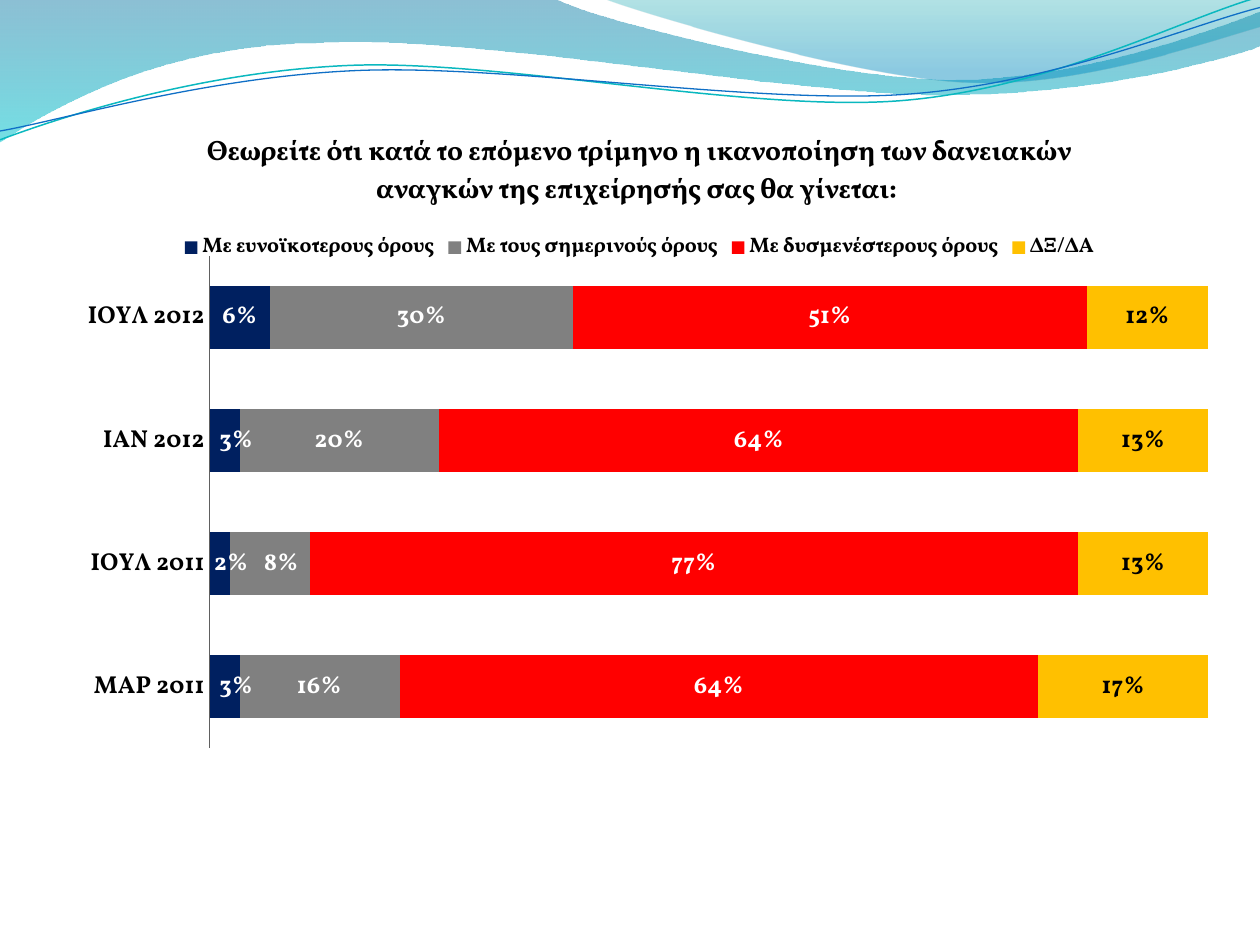
import math

import pptx
import pptx.chart.data
import pptx.dml.color
import pptx.enum.chart
import pptx.oxml.ns
import pptx.util
from lxml import etree

Cm, Pt = pptx.util.Cm, pptx.util.Pt
qn = pptx.oxml.ns.qn
enum = pptx.enum.chart
FACE = "Vollkorn"
INCH = 2.54


def hue(code):
    return pptx.dml.color.RGBColor.from_string(code)


def place(node, index, **parts):
    """Give a chart node a manual layout as its child at the given index."""
    for old in node.findall(qn("c:layout")):
        node.remove(old)
    layout = etree.Element(qn("c:layout"))
    manual = etree.SubElement(layout, qn("c:manualLayout"))
    for name, value in parts.items():
        etree.SubElement(manual, qn("c:" + name)).set("val", str(value))
    node.insert(index, layout)


deck = pptx.Presentation()
deck.slide_width, deck.slide_height = Cm(10 * INCH), Cm(7.5 * INCH)
slide = deck.slides.add_slide(deck.slide_layouts[6])

# Waves in inches: two numbers end a straight line, six a Bezier curve.
# A filled wave lists (position, colour, opacity); a thin one has
# (colour, width) and the centre it is tilted about.
waves = [
    ([(0, -0.01), (4.4, -0.01), (4.76, 0.17, 6.64, 0.63, 7.58, 0.63),
      (8.53, 0.63, 9.58, 0.26, 10, 0.09), (10.01, 0.36),
      (9.83, 0.44, 8.7, 0.76, 7.46, 0.75), (6.22, 0.75, 3.82, 0.28, 2.57, 0.34),
      (1.29, 0.35, 0.46, 0.83, -0.01, 1.13), (0, -0.01)],
     [(0, "0074A1", 45), (1, "00C6CF", 55)], None, None),
    ([(4.79, -0.01), (5.09, 0.11, 6.82, 0.62, 7.69, 0.65),
      (8.56, 0.69, 9.61, 0.32, 10, 0.21), (10, 0), (4.79, -0.01)],
     [(0, "00A1A9", 30), (0.8, "008BBF", 45)], None, None),
    ([(0, 1.11), (0.48, 0.93, 1.58, 0.57, 2.77, 0.52),
      (3.95, 0.47, 5.93, 0.89, 7.13, 0.8), (8.33, 0.71, 9.38, 0.15, 9.98, -0.02)],
     None, ("0AB8BF", 0.85), (4.99, 0.58)),
    ([(0, 1.04), (0.47, 0.96, 1.64, 0.61, 2.83, 0.56),
      (4.03, 0.51, 5.97, 0.83, 7.17, 0.75), (8.36, 0.67, 9.41, 0.21, 10, 0.06)],
     None, ("0F6FC6", 0.75), (5, 0.59)),
]
UNITS = 1000
TILT = 2.7
sin, cos = math.sin(math.radians(TILT)), math.cos(math.radians(TILT))
for path, stops, line, mid in waves:
    dots = [part[k:k + 2] for part in path for k in range(0, len(part), 2)]
    if mid:
        gaps = [(x - mid[0], y - mid[1]) for x, y in dots]
        dots = [(mid[0] + x * cos - y * sin, mid[1] + x * sin + y * cos) for x, y in gaps]
    dots = [(x * UNITS, y * UNITS) for x, y in dots]
    pen = slide.shapes.build_freeform(*dots[0], scale=Cm(INCH) / UNITS)
    pen.add_line_segments(dots[1:], close=stops is not None)
    wave = pen.convert_to_shape()
    wave.shadow.inherit = False

    # Join each three points of a curve into one Bezier segment
    lines = iter(list(wave._element.iter(qn("a:lnTo"))))
    for part in path[1:]:
        first = next(lines)
        if len(part) == 6:
            first.tag = qn("a:cubicBezTo")
            for other in (next(lines), next(lines)):
                first.append(other[0])
                other.getparent().remove(other)

    if line:
        wave.rotation = 360 - TILT
        wave.fill.background()
        wave.line.color.rgb = hue(line[0])
        wave.line.width = Pt(line[1])
        continue
    wave.line.fill.background()
    wave.fill.gradient()
    wave.fill.gradient_angle = 270
    for stop, (spot, code, _) in zip(wave.fill.gradient_stops, stops):
        stop.position = spot
        stop.color.rgb = hue(code)
    tints = wave._element.spPr.iter(qn("a:srgbClr"))
    for tint, (_, _, alpha) in zip(tints, stops):
        etree.SubElement(tint, qn("a:alpha")).set("val", str(alpha * 1000))

# Each answer: name, shares, bar colour, label colour, rows with a moved label
answers = [
    ("Με ευνοϊκοτερους όρους", (0.03, 0.02, 0.03, 0.06), "002060", "FFFFFF", (0, 1, 2)),
    ("Με τους σημερινούς όρους", (0.16, 0.08, 0.2, 0.3), "808080", "FFFFFF", (1,)),
    ("Με δυσμενέστερους όρους", (0.64, 0.77, 0.64, 0.51), "FF0000", "FFFFFF", ()),
    ("ΔΞ/ΔΑ", (0.17, 0.13, 0.13, 0.12), "FFC000", "000000", ()),
]
data = pptx.chart.data.CategoryChartData(number_format="0%")
data.categories = ["ΜΑΡ 2011", "ΙΟΥΛ 2011", "ΙΑΝ 2012", "ΙΟΥΛ 2012"]
for name, shares, *_ in answers:
    data.add_series(name, shares)
chart = slide.shapes.add_chart(
    enum.XL_CHART_TYPE.BAR_STACKED_100, Cm(0.43 * INCH), Cm(0.84 * INCH),
    Cm(9.29 * INCH), Cm(5.39 * INCH), data).chart
chart.font.name = FACE
chart.font.size = Pt(10)
chart.font.color.rgb = hue("000000")

chart.has_title = True
title = chart.chart_title.text_frame
title.text = ("Θεωρείτε ότι κατά το επόμενο τρίμηνο η ικανοποίηση των δανειακών "
              "αναγκών της επιχείρησής σας θα γίνεται: ")
chart.has_legend = True
legend = chart.legend
legend.position = enum.XL_LEGEND_POSITION.TOP
legend.include_in_layout = False

rows = chart.category_axis
rows.major_tick_mark = enum.XL_TICK_MARK.NONE
rows.format.line.color.rgb = hue("606060")
rows.format.line.width = Pt(0.75)
scale = chart.value_axis
scale.visible = False
scale.has_major_gridlines = False

plot = chart.plots[0]
plot.gap_width, plot.overlap = 95, 100
plot.vary_by_categories = False
place(chart._chartSpace.chart.plotArea, 0, layoutTarget="inner",
      xMode="edge", yMode="edge", x=0.133, y=0.221, w=0.853, h=0.725)

fonts = [(title.paragraphs[0].runs[0].font, 16, "000000"),
         (legend.font, 12, "000000"), (rows.tick_labels.font, 14, "000000")]
for bar, (_, _, code, ink, moved) in zip(plot.series, answers):
    bar.format.fill.solid()
    bar.format.fill.fore_color.rgb = hue(code)
    labels = bar.data_labels
    labels.show_value = True
    labels.number_format, labels.number_format_is_linked = "0%", False
    labels.position = enum.XL_LABEL_POSITION.CENTER
    fonts.append((labels.font, 14, ink))
    for row in moved:
        label = bar.points[row].data_label
        label.position = enum.XL_LABEL_POSITION.CENTER
        fonts.append((label.font, 14, ink))
        place(label._get_or_add_dLbl(), 1, x=0.01, y=0)
for font, size, ink in fonts:
    font.name = FACE
    font.size = Pt(size)
    font.bold = True
    font.color.rgb = hue(ink)

deck.save("out.pptx")
